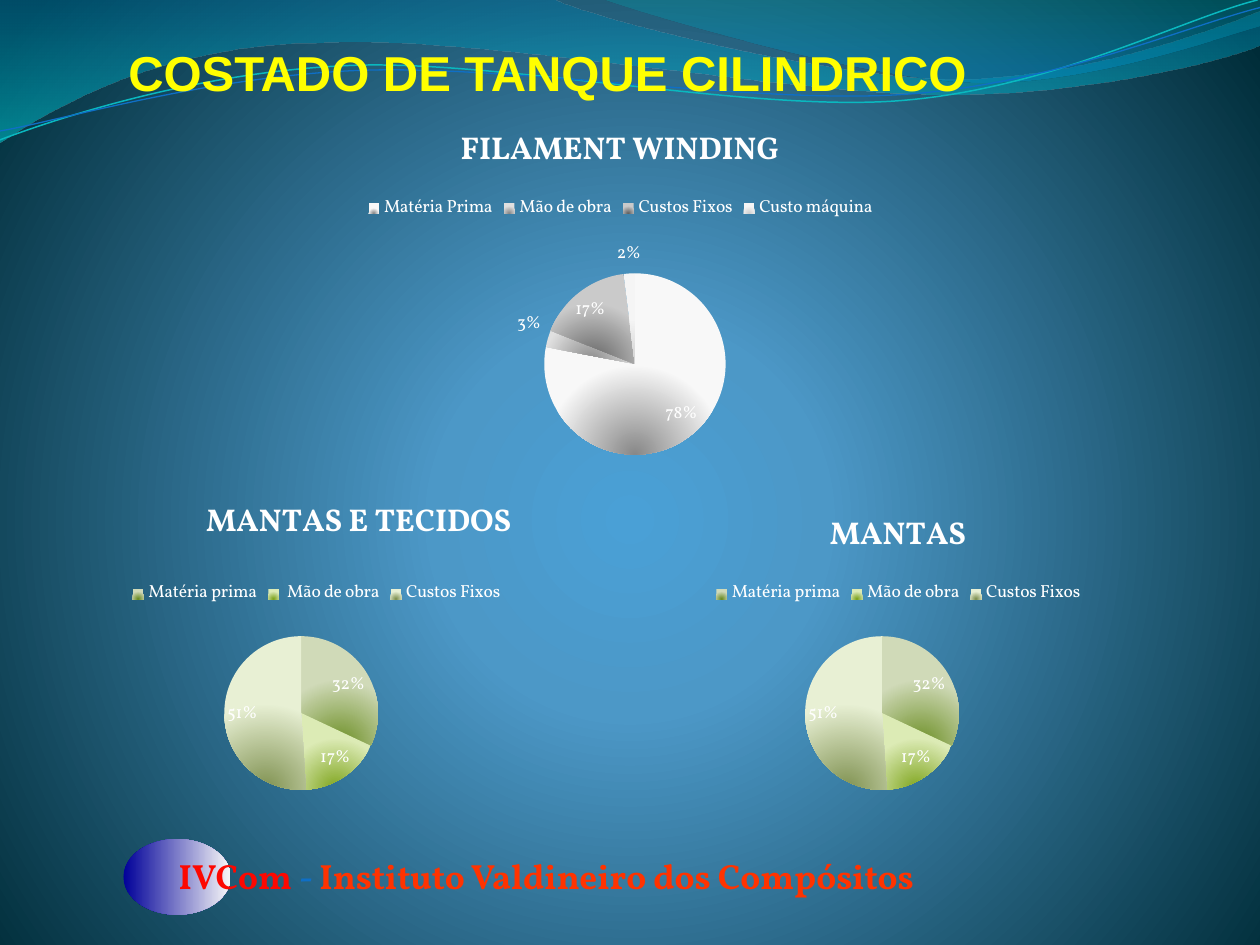
"""Build a cost breakdown slide with three pie charts for a cylindrical tank shell."""
from lxml import etree
from pptx import Presentation, util as u
from pptx.chart.data import CategoryChartData
from pptx.dml.color import RGBColor
from pptx.enum import chart as charts, shapes, text
from pptx.oxml.ns import qn

THEME = {
    "heading": "Arial", "body": "Vollkorn",
    "heading_size": 28, "footer_size": 20, "chart_title": 18, "chart_text": 10,
    "title": "FFFF00", "white": "FFFFFF",
    "backdrop": [(0, "4AA0D6", 100), (25, "4C98C7", 100), (100, "002C38", 100)],
    "wide_wave": [(0, "0074A1", 45), (100, "00C6CF", 55)],
    "corner_wave": [(0, "00A1A9", 30), (80, "008BBF", 45)],
    "emblem": [(0, "000099", 100), (100, "F8F8F8", 100)],
    "teal": "0AB8BF", "blue": "0F6FC6", "red": "FD0801", "orange": "FF3300",
    "greys": [("888888", "F8F8F8", 70), ("888888", "E0E0E0", 99),
              ("606060", "CACACA", 99), ("D0D0D0", "F5F5F5", 99)],
    "greens": [("6B8E23", "D0DAB8", 99), ("7FA51E", "DCEBB5", 99),
               ("7F9150", "E8F0D4", 99)],
}


def set_gradient(fill, stops, angle=None, focus=None):
    fill.gradient()
    grad = fill._xPr.find(qn("a:gradFill"))
    for child in list(grad):
        grad.remove(child)
    stop_list = etree.SubElement(grad, qn("a:gsLst"))
    for position, color, alpha in stops:
        stop = etree.SubElement(stop_list, qn("a:gs"), pos=str(position * 1000))
        tone = etree.SubElement(stop, qn("a:srgbClr"), val=color)
        if alpha < 100:
            etree.SubElement(tone, qn("a:alpha"), val=str(alpha * 1000))
    if focus is None:
        etree.SubElement(grad, qn("a:lin"), ang=str(angle * 60000), scaled="0")
    else:
        circle = etree.SubElement(grad, qn("a:path"), path="circle")
        sides = {side: str(value * 1000) for side, value in zip("ltrb", focus)}
        etree.SubElement(circle, qn("a:fillToRect"), **sides)


def place(owner, frame, left, top, size=None):
    for old in owner.findall(qn("c:layout")):
        owner.remove(old)
    layout = etree.Element(qn("c:layout"))
    overlay = owner.find(qn("c:overlay"))
    if overlay is None:
        owner.insert(0, layout)
    else:
        overlay.addprevious(layout)
    manual = etree.SubElement(layout, qn("c:manualLayout"))
    if size:
        etree.SubElement(manual, qn("c:layoutTarget"), val="inner")
    for name in ("xMode", "yMode"):
        etree.SubElement(manual, qn("c:" + name), val="edge")
    x, y, width, height = frame
    values = {"x": (left - x) / width, "y": (top - y) / height}
    if size:
        values.update(w=size / width, h=size / height)
    for name, value in values.items():
        etree.SubElement(manual, qn("c:" + name), val=f"{value:.4f}")


deck = Presentation()
deck.slide_width, deck.slide_height = u.Inches(10), u.Inches(7.5)
slide = deck.slides.add_slide(deck.slide_layouts[6])
set_gradient(slide.background.fill, THEME["backdrop"], focus=(10, 110, 10, 100))

waves = [
    ((0, 0), [(4.4, 0), (4.76, 0.17, 6.64, 0.63, 7.58, 0.63),
              (8.53, 0.63, 9.58, 0.26, 10, 0.09), (10, 0.36),
              (9.83, 0.44, 8.7, 0.76, 7.46, 0.75),
              (6.22, 0.75, 3.82, 0.28, 2.57, 0.34),
              (1.29, 0.35, 0.46, 0.83, 0, 1.13)], "wide_wave", None),
    ((4.79, 0), [(5.09, 0.11, 6.82, 0.62, 7.69, 0.65),
                 (8.56, 0.69, 9.61, 0.32, 10, 0.21), (10, 0)], "corner_wave", None),
    ((0, 1.11), [(0.48, 0.93, 1.58, 0.57, 2.77, 0.52),
                 (3.95, 0.47, 5.93, 0.89, 7.13, 0.8),
                 (8.33, 0.71, 9.38, 0.15, 9.98, 0)], "teal", 0.85),
    ((0, 1.04), [(0.47, 0.96, 1.64, 0.61, 2.83, 0.56),
                 (4.03, 0.51, 5.97, 0.83, 7.17, 0.75),
                 (8.36, 0.67, 9.41, 0.21, 10, 0.06)], "blue", 0.75),
]
for start, segments, style, line_width in waves:
    builder = slide.shapes.build_freeform(*map(u.Inches, start))
    ends = [tuple(map(u.Inches, segment[-2:])) for segment in segments]
    builder.add_line_segments(ends, close=line_width is None)
    wave = builder.convert_to_shape()
    for straight, segment in zip(list(wave._element.iter(qn("a:lnTo"))), segments):
        if len(segment) == 6:
            curve = etree.Element(qn("a:cubicBezTo"))
            for x, y in zip(segment[::2], segment[1::2]):
                etree.SubElement(curve, qn("a:pt"), x=str(u.Inches(x) - wave.left),
                                 y=str(u.Inches(y) - wave.top))
            straight.getparent().replace(straight, curve)
    wave.shadow.inherit = False
    if line_width is None:
        set_gradient(wave.fill, THEME[style], angle=90)
        wave.line.fill.background()
    else:
        wave.fill.background()
        wave.line.color.rgb = RGBColor.from_string(THEME[style])
        wave.line.width = u.Pt(line_width)

emblem = slide.shapes.add_shape(shapes.MSO_SHAPE.OVAL, u.Inches(0.98), u.Inches(6.66),
                                u.Inches(0.85), u.Inches(0.6))
emblem.shadow.inherit = False
set_gradient(emblem.fill, THEME["emblem"], angle=0)
emblem.line.fill.background()

labels = [
    ((1.32, 6.73, 6.58, 0.43), "body", "footer_size", text.PP_ALIGN.LEFT, True,
     [("IVCom ", "red"), ("- ", "blue"),
      ("Instituto Valdineiro dos Compósitos", "orange")]),
    ((0.88, 0.29, 6.93, 0.57), "heading", "heading_size", text.PP_ALIGN.CENTER, False,
     [("COSTADO DE TANQUE CILINDRICO", "title")]),
]
for frame, font, size, align, wrap, spans in labels:
    box = slide.shapes.add_textbox(*map(u.Inches, frame))
    box.text_frame.word_wrap = wrap
    box.text_frame.auto_size = text.MSO_AUTO_SIZE.SHAPE_TO_FIT_TEXT
    para = box.text_frame.paragraphs[0]
    para.alignment = align
    for words, color in spans:
        span = para.add_run()
        span.text = words
        span.font.name = THEME[font]
        span.font.size = u.Pt(THEME[size])
        span.font.bold = True
        span.font.color.rgb = RGBColor.from_string(THEME[color])

pies = [
    ("FILAMENT WINDING", (2.49, 0.84, 4.86, 2.91),
     {"Matéria Prima": 78, "Mão de obra": 3, "Custos Fixos": 17, "Custo máquina": 2},
     "greys", (3.61, 0.95), (2.88, 1.52), (4.32, 2.17, 1.44)),
    ("MANTAS E TECIDOS", (0.27, 3.9, 4.48, 2.68),
     {"Matéria prima": 32, " Mão de obra": 17, "Custos Fixos": 51},
     "greens", (1.59, 3.9), (1.01, 4.58), (1.78, 5.05, 1.22)),
    ("MANTAS", (4.87, 3.9, 4.52, 2.69),
     {"Matéria prima": 32, "Mão de obra": 17, "Custos Fixos": 51},
     "greens", (6.54, 4.01), (5.64, 4.58), (6.39, 5.05, 1.22)),
]
for title, frame, costs, palette, title_at, legend_at, pie_at in pies:
    data = CategoryChartData()
    data.categories = list(costs)
    data.add_series("Series 1", list(costs.values()))
    chart = slide.shapes.add_chart(charts.XL_CHART_TYPE.PIE, *map(u.Inches, frame), data).chart
    chart.font.name = THEME["body"]
    chart.font.size = u.Pt(THEME["chart_text"])
    chart.font.color.rgb = RGBColor.from_string(THEME["white"])

    chart.has_title = True
    heading = chart.chart_title.text_frame
    heading.text = title
    font = heading.paragraphs[0].runs[0].font
    font.name, font.size, font.bold = THEME["body"], u.Pt(THEME["chart_title"]), True
    font.color.rgb = RGBColor.from_string(THEME["white"])
    place(chart.chart_title._element, frame, *title_at)

    chart.has_legend = True
    chart.legend.position = charts.XL_LEGEND_POSITION.TOP
    chart.legend.include_in_layout = False
    place(chart.legend._element, frame, *legend_at)

    plot = chart.plots[0]
    place(plot._element.getparent(), frame, *pie_at)
    plot.vary_by_categories = True
    plot.has_data_labels = True
    plot.data_labels.show_value = False
    plot.data_labels.show_percentage = True
    plot.data_labels.number_format = "0%"
    plot.data_labels.number_format_is_linked = False
    plot.data_labels.position = charts.XL_LABEL_POSITION.BEST_FIT
    for index, (dark, light, reach) in enumerate(THEME[palette]):
        point = plot.series[0].points[index]
        set_gradient(point.format.fill,
                     [(0, dark, 100), (reach, light, 100), (100, light, 100)],
                     focus=(50, 100, 50, 0))
        point.format.line.fill.background()

deck.save("out.pptx")
